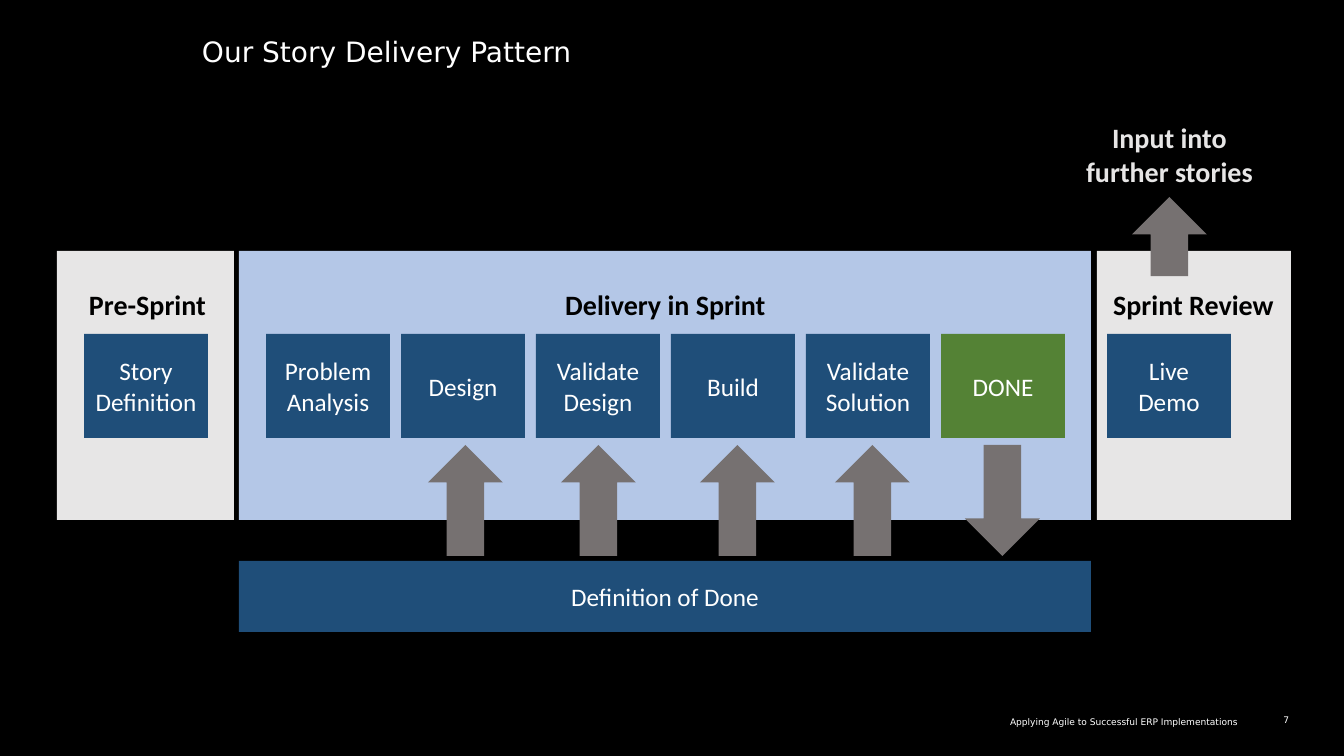
from pptx import Presentation
from pptx import util as u
from pptx.dml.color import RGBColor
from pptx.enum import shapes, text

BLACK = RGBColor(0x00, 0x00, 0x00)
WHITE = RGBColor(0xFF, 0xFF, 0xFF)
LIGHT_GREY = RGBColor(0xE7, 0xE6, 0xE6)
DARK_GREY = RGBColor(0x76, 0x71, 0x71)
PALE_BLUE = RGBColor(0xB4, 0xC7, 0xE7)
NAVY = RGBColor(0x1F, 0x4E, 0x79)
GREEN = RGBColor(0x54, 0x82, 0x35)

EMU_PER_PX = 914400 / 100.8
HEADING_FONT = "DejaVu Sans"
BODY_FONT = "Calibri"


def px(*lengths):
    return [u.Emu(round(length * EMU_PER_PX)) for length in lengths]


class Board:
    def __init__(self, slide):
        self.slide = slide
        slide.background.fill.solid()
        slide.background.fill.fore_color.rgb = BLACK

    def add_words(self, frame, words, size, color, font, align, bold=False):
        frame.word_wrap = True
        paragraph = frame.paragraphs[0]
        paragraph.alignment = align
        run = paragraph.add_run()
        run.text = words
        run.font.size = u.Pt(size)
        run.font.name = font
        run.font.bold = bold
        run.font.color.rgb = color

    def shape(self, kind, left, top, width, height, color):
        shape = self.slide.shapes.add_shape(kind, *px(left, top, width, height))
        shape.shadow.inherit = False
        shape.fill.solid()
        shape.fill.fore_color.rgb = color
        shape.line.fill.background()
        return shape

    def panel(self, left, top, width, height, color):
        return self.shape(shapes.MSO_SHAPE.RECTANGLE, left, top, width, height, color)

    def box(self, words, left, top, width, height, color=NAVY):
        frame = self.panel(left, top, width, height, color).text_frame
        frame.vertical_anchor = text.MSO_ANCHOR.MIDDLE
        self.add_words(frame, words, 18, WHITE, BODY_FONT, text.PP_ALIGN.CENTER)

    def arrow(self, kind, left, top, height):
        self.shape(kind, left, top, 75, height, DARK_GREY)

    def label(self, words, left, top, width, height, color=BLACK):
        frame = self.slide.shapes.add_textbox(*px(left, top, width, height)).text_frame
        self.add_words(frame, words, 20, color, BODY_FONT, text.PP_ALIGN.CENTER, True)

    def plain(self, words, left, top, width, height, size, align):
        frame = self.slide.shapes.add_textbox(*px(left, top, width, height)).text_frame
        frame.margin_left = frame.margin_right = 0
        frame.margin_top = frame.margin_bottom = 0
        self.add_words(frame, words, size, WHITE, HEADING_FONT, align)


def main():
    deck = Presentation()
    deck.slide_width, deck.slide_height = px(1344, 756)
    board = Board(deck.slides.add_slide(deck.slide_layouts[6]))
    up, down = shapes.MSO_SHAPE.UP_ARROW, shapes.MSO_SHAPE.DOWN_ARROW

    board.plain("Our Story Delivery Pattern", 202, 35, 891, 77, 20, text.PP_ALIGN.LEFT)
    board.plain("Applying Agile to Successful ERP Implementations",
                699, 716, 539, 22, 6.5, text.PP_ALIGN.RIGHT)
    board.plain("7", 1255, 714, 34, 11, 6.5, text.PP_ALIGN.RIGHT)

    phases = [
        ("Pre-Sprint", 57, 177, LIGHT_GREY, 33),
        ("Delivery in Sprint", 239, 852, PALE_BLUE, 551),
        ("Sprint Review", 1097, 194, LIGHT_GREY, 1079),
    ]
    for phase, left, width, color, label_left in phases:
        board.panel(left, 251, width, 269, color)
        board.label(phase, label_left, 283, 229, 44)

    sprint_steps = ["Problem Analysis", "Design", "Validate Design",
                    "Build", "Validate Solution", "DONE"]
    steps = [("Story Definition", 84), ("Live Demo", 1107)]
    steps += [(step, 266 + 135 * i) for i, step in enumerate(sprint_steps)]
    for step, left in steps:
        board.box(step, left, 334, 124, 104, GREEN if step == "DONE" else NAVY)
    board.box("Definition of Done", 239, 561, 852, 71)

    for left in (428, 561, 700, 835):
        board.arrow(up, left, 445, 111)
    board.arrow(down, 965, 445, 111)
    board.arrow(up, 1132, 197, 79)
    board.label("Input into further stories", 1066, 116, 207, 112, LIGHT_GREY)

    deck.save("out.pptx")


if __name__ == "__main__":
    main()
